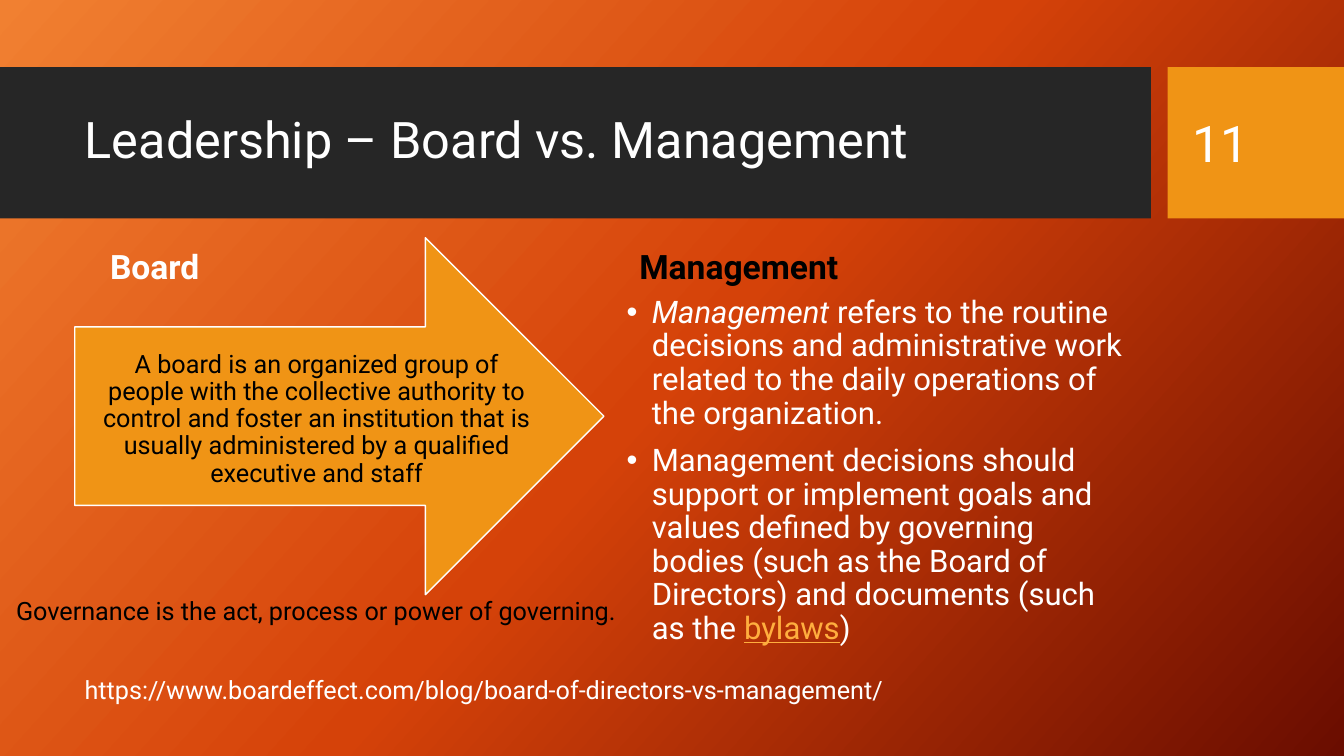
from dataclasses import dataclass

from lxml import etree
from pptx import Presentation
from pptx import util as u
from pptx.dml.color import RGBColor
from pptx.enum import shapes, text
from pptx.oxml.ns import qn


@dataclass(frozen=True)
class Theme:
    font: str = "Roboto"
    white: str = "FFFFFF"
    black: str = "000000"
    band: str = "262626"
    accent: str = "F09415"
    link: str = "FFAE3E"
    gradient: tuple = ((0, "F18031"), (50, "D54209"), (100, "6A0D00"))
    gradient_angle: int = 42
    title_size: float = 36
    heading_size: float = 24
    list_size: float = 22.2
    text_size: float = 18
    tight: float = 0.9


class SlideBuilder:
    COLUMNS = 160
    ROWS = 90

    def __init__(self, presentation, theme):
        self.theme = theme
        self.column = presentation.slide_width / self.COLUMNS
        self.row = presentation.slide_height / self.ROWS
        self.slide = presentation.slides.add_slide(presentation.slide_layouts[4])
        self.placeholders = {
            shape.placeholder_format.idx: shape for shape in self.slide.placeholders
        }

    def box(self, left, top, width, height):
        return (
            u.Emu(round(left * self.column)),
            u.Emu(round(top * self.row)),
            u.Emu(round(width * self.column)),
            u.Emu(round(height * self.row)),
        )

    def background(self):
        fill = self.slide.background.fill
        fill.gradient()
        fill.gradient_angle = 360 - self.theme.gradient_angle
        stops = next(self.slide.element.iter(qn("a:gsLst")))
        for stop in list(stops):
            stops.remove(stop)
        for position, color in self.theme.gradient:
            stop = etree.SubElement(stops, qn("a:gs"), pos=str(position * 1000))
            etree.SubElement(stop, qn("a:srgbClr"), val=color)

    def block(self, kind, grid, fill, line=None):
        shape = self.slide.shapes.add_shape(kind, *self.box(*grid))
        shape.shadow.inherit = False
        shape.fill.solid()
        shape.fill.fore_color.rgb = RGBColor.from_string(fill)
        if line:
            shape.line.color.rgb = RGBColor.from_string(line)
            shape.line.width = u.Pt(1)
        else:
            shape.line.fill.background()
        self.placeholders[0].element.addprevious(shape.element)

    def frame(self, shape, anchor):
        frame = shape.text_frame
        frame.word_wrap = True
        frame.auto_size = text.MSO_AUTO_SIZE.NONE
        frame.vertical_anchor = anchor
        return frame

    def style(self, paragraph, size, color, bold=False, spacing=1.0,
              align=text.PP_ALIGN.LEFT):
        paragraph.alignment = align
        paragraph.line_spacing = spacing
        paragraph.space_before = u.Pt(0)
        font = paragraph.font
        font.name = self.theme.font
        font.size = u.Pt(size)
        font.bold = bold
        font.color.rgb = RGBColor.from_string(color)

    def placeholder(self, index, grid):
        shape = self.placeholders[index]
        shape.left, shape.top, shape.width, shape.height = self.box(*grid)
        return shape

    def heading(self, index, grid, words, size, color, bold, anchor):
        frame = self.frame(self.placeholder(index, grid), anchor)
        frame.text = words
        self.style(frame.paragraphs[0], size, color, bold, self.theme.tight)

    def label(self, grid, words, color, size=None, spacing=1.0,
              align=text.PP_ALIGN.LEFT, anchor=text.MSO_ANCHOR.TOP, inset=0.1):
        shape = self.slide.shapes.add_textbox(*self.box(*grid))
        frame = self.frame(shape, anchor)
        frame.margin_left = frame.margin_right = u.Inches(inset)
        frame.text = words
        self.style(frame.paragraphs[0], size or self.theme.text_size, color,
                   spacing=spacing, align=align)

    def bullets(self, index, grid, items):
        frame = self.frame(self.placeholder(index, grid), text.MSO_ANCHOR.TOP)
        for number, runs in enumerate(items):
            paragraph = frame.add_paragraph() if number else frame.paragraphs[0]
            properties = paragraph._p.get_or_add_pPr()
            properties.set("marL", str(u.Inches(0.25)))
            properties.set("indent", str(u.Inches(-0.25)))
            etree.SubElement(properties, qn("a:buChar"), char="•")
            self.style(paragraph, self.theme.list_size, self.theme.white,
                       spacing=self.theme.tight)
            if number:
                paragraph.space_before = u.Pt(10)
            for words, look in runs:
                run = paragraph.add_run()
                run.text = words
                if look == "italic":
                    run.font.italic = True
                elif look == "link":
                    run.font.underline = True
                    run.font.color.rgb = RGBColor.from_string(self.theme.link)

    def remove_empty_placeholders(self):
        for shape in list(self.slide.placeholders):
            if not shape.text_frame.text:
                shape.element.getparent().remove(shape.element)


def main():
    presentation = Presentation()
    presentation.slide_width = u.Inches(13.33)
    presentation.slide_height = u.Inches(7.5)
    theme = Theme()
    builder = SlideBuilder(presentation, theme)
    middle, bottom = text.MSO_ANCHOR.MIDDLE, text.MSO_ANCHOR.BOTTOM
    rectangle = shapes.MSO_SHAPE.RECTANGLE

    builder.background()
    builder.block(rectangle, (0, 8, 137, 18), theme.band)
    builder.block(rectangle, (139, 8, 21, 18), theme.accent)
    builder.block(shapes.MSO_SHAPE.RIGHT_ARROW, (8.9, 28.3, 63, 42.5),
                  theme.accent, theme.white)

    builder.heading(0, (8.9, 9.8, 126.1, 14.2), "Leadership – Board vs. Management",
                    theme.title_size, theme.white, False, middle)
    for index, left, words, color in ((1, 11.9, "Board", theme.white),
                                      (3, 74.9, "Management", theme.black)):
        builder.heading(index, (left, 28.7, 58.7, 6), words,
                        theme.heading_size, color, True, bottom)
    builder.bullets(4, (73.4, 34.7, 61.7, 43.2), (
        (("Management", "italic"),
         (" refers to the routine decisions and administrative work related to "
          "the daily operations of the organization.", None)),
        (("Management decisions should support or implement goals and values "
          "defined by governing bodies (such as the Board of Directors) and "
          "documents (such as the ", None),
         ("bylaws", "link"),
         (")", None)),
    ))

    builder.label((140.8, 9.8, 15.1, 14.3), "11", theme.white,
                  size=theme.title_size, anchor=middle)
    builder.label((8.9, 79.7, 104.4, 4.8),
                  "https://www.boardeffect.com/blog/board-of-directors-vs-management/",
                  theme.white)
    builder.label((11.9, 40, 51.6, 19.9),
                  "A board is an organized group of people with the collective "
                  "authority to control and foster an institution that is usually "
                  "administered by a qualified executive and staff",
                  theme.black, spacing=theme.tight, align=text.PP_ALIGN.CENTER,
                  anchor=middle, inset=0)
    builder.label((0, 70.3, 77, 8.5),
                  "Governance is the act, process or power of governing.",
                  theme.black, inset=0.16)
    builder.remove_empty_placeholders()
    presentation.save("out.pptx")


if __name__ == "__main__":
    main()
